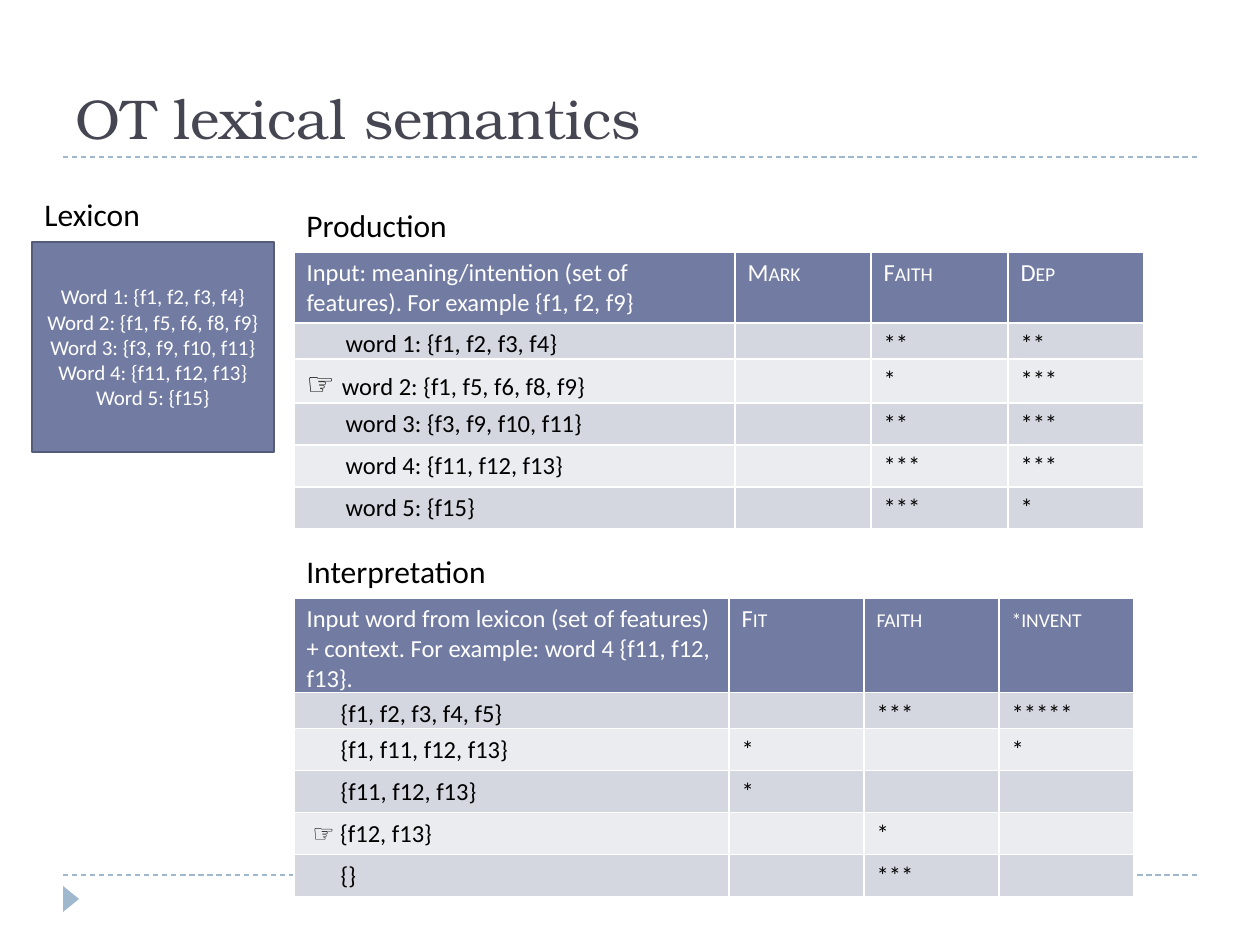
from lxml.etree import SubElement
from pptx import Presentation
from pptx.dml.color import RGBColor
from pptx.enum.dml import MSO_LINE
from pptx.enum.shapes import MSO_CONNECTOR, MSO_SHAPE
from pptx.enum.text import MSO_ANCHOR, PP_ALIGN
from pptx.oxml.ns import qn
from pptx.util import Pt

PX = 914400 / 126
SERIF, SANS = "TeX Gyre Bonum", "Calibri"
WHITE, BLACK, INK = "FFFFFF", "000000", "464653"
HEAD, EDGE, ACCENT = "727CA3", "545C79", "9FB8CD"
BANDS = ["D5D7E0", "EBECF0"]

# Content
TITLE = "OT lexical semantics"
WORDS = [
    "Word 1: {f1, f2, f3, f4}",
    "Word 2: {f1, f5, f6, f8, f9}",
    "Word 3: {f3, f9, f10, f11}",
    "Word 4: {f11, f12, f13}",
    "Word 5: {f15}",
]
LABELS = [  # text, left, top, width
    ("Lexicon", 32, 189, 273),
    ("Production", 294, 200, 441),
    ("Interpretation", 294, 546, 441),
]
TABLEAUX = [
    dict(
        top=252, cols=[441, 136, 137, 136], rows=[71, 36, 44, 42, 42, 42],
        indent=39, hand_indent=0, hand_size=18, winner=2,
        head=["Input: meaning/intention (set of features). For example {f1, f2, f9}",
              "Mark", "Faith", "Dep"],
        body=[
            ["word 1: {f1, f2, f3, f4}", "", "**", "**"],
            ["word 2: {f1, f5, f6, f8, f9}", "", "*", "***"],
            ["word 3: {f3, f9, f10, f11}", "", "**", "***"],
            ["word 4: {f11, f12, f13}", "", "***", "***"],
            ["word 5: {f15}", "", "***", "*"],
        ],
    ),
    dict(
        top=598, cols=[435, 135, 135, 135], rows=[94, 36, 42, 42, 42, 42],
        indent=34, hand_indent=6, hand_size=14, winner=4,
        head=["Input word from lexicon (set of features) + context. "
              "For example: word 4 {f11, f12, f13}.",
              "Fit", "faith", "*invent"],
        body=[
            ["{f1, f2, f3, f4, f5}", "", "***", "*****"],
            ["{f1, f11, f12, f13}", "*", "", "*"],
            ["{f11, f12, f13}", "*", "", ""],
            ["{f12, f13}", "", "*", ""],
            ["{}", "", "***", ""],
        ],
    ),
]


def px(*lengths):
    return [round(n * PX) for n in lengths]


def rgb(color):
    return RGBColor.from_string(color)


def add_run(p, text, size, color, face=SANS, bold=False):
    r = p.add_run()
    r.text = text
    r.font.size, r.font.name, r.font.bold = Pt(size), face, bold
    r.font.color.rgb = rgb(color)
    return r


def add_text(s, box, text, size, color, face=SANS, anchor=MSO_ANCHOR.TOP):
    tf = s.shapes.add_textbox(*px(*box)).text_frame
    tf.word_wrap, tf.vertical_anchor = True, anchor
    add_run(tf.paragraphs[0], text, size, color, face)


def add_solid(s, kind, box, fill):
    sp = s.shapes.add_shape(kind, *px(*box))
    sp.shadow.inherit = False
    sp.fill.solid()
    sp.fill.fore_color.rgb = rgb(fill)
    sp.line.fill.background()
    return sp


def add_rule(s, y):
    line = s.shapes.add_connector(MSO_CONNECTOR.STRAIGHT, *px(63, y, 1197, y))
    line.line.color.rgb = rgb(ACCENT)
    line.line.width, line.line.dash_style = Pt(0.75), MSO_LINE.DASH
    SubElement(line._element.spPr, qn("a:effectLst"))


def fill_cell(cell, text, i, j, t):
    cell.margin_left, cell.margin_right = Pt(7.2), Pt(7.2)
    cell.margin_top, cell.margin_bottom = Pt(3.6), 0
    cell.fill.solid()
    cell.fill.fore_color.rgb = rgb(BANDS[(i - 1) % 2] if i else HEAD)
    p = cell.text_frame.paragraphs[0]
    if not text:  # keeps an empty cell from growing its row
        SubElement(p._p, qn("a:endParaRPr"), sz="1400")
        return
    if i and j == 0:
        won = i == t["winner"]
        indent = t["hand_indent"] if won else t["indent"]
        p._p.get_or_add_pPr().set("marL", str(px(indent)[0]))
        if won:
            add_run(p, "☞ ", t["hand_size"], BLACK, bold=True)
    r = add_run(p, text, 14, BLACK if i else WHITE)
    if i == 0 and j:
        r._r.get_or_add_rPr().set("cap", "small")


def add_tableau(s, t):
    cols, rows = t["cols"], t["rows"]
    table = s.shapes.add_table(
        len(rows), len(cols), *px(294, t["top"], sum(cols), sum(rows))).table
    for col, w in zip(table.columns, px(*cols)):
        col.width = w
    for row, h in zip(table.rows, px(*rows)):
        row.height = h
    for i, texts in enumerate([t["head"]] + t["body"]):
        for j, text in enumerate(texts):
            fill_cell(table.cell(i, j), text, i, j, t)


def main():
    prs = Presentation()
    prs.slide_width, prs.slide_height = px(1260, 945)
    s = prs.slides.add_slide(prs.slide_layouts[6])

    # Frame: dashed rules, corner marker, title
    for y in (875, 157):
        add_rule(s, y)
    add_solid(s, MSO_SHAPE.ISOSCELES_TRIANGLE, (58, 891, 26, 16), ACCENT).rotation = 90
    add_text(s, (63, 21, 1134, 136), TITLE, 32, INK, SERIF, MSO_ANCHOR.BOTTOM)

    # Lexicon box
    sp = add_solid(s, MSO_SHAPE.RECTANGLE, (32, 242, 242, 210), HEAD)
    sp.line.color.rgb, sp.line.width = rgb(EDGE), Pt(1.5)
    tf = sp.text_frame
    tf.word_wrap, tf.vertical_anchor = True, MSO_ANCHOR.MIDDLE
    for k, word in enumerate(WORDS):
        p = tf.add_paragraph() if k else tf.paragraphs[0]
        p.alignment = PP_ALIGN.CENTER
        add_run(p, word, 12, WHITE)

    # Tableaux and labels
    for t in TABLEAUX:
        add_tableau(s, t)
    for text, left, top, width in LABELS:
        add_text(s, (left, top, width, 51), text, 18, BLACK)

    prs.save("out.pptx")


if __name__ == "__main__":
    main()
